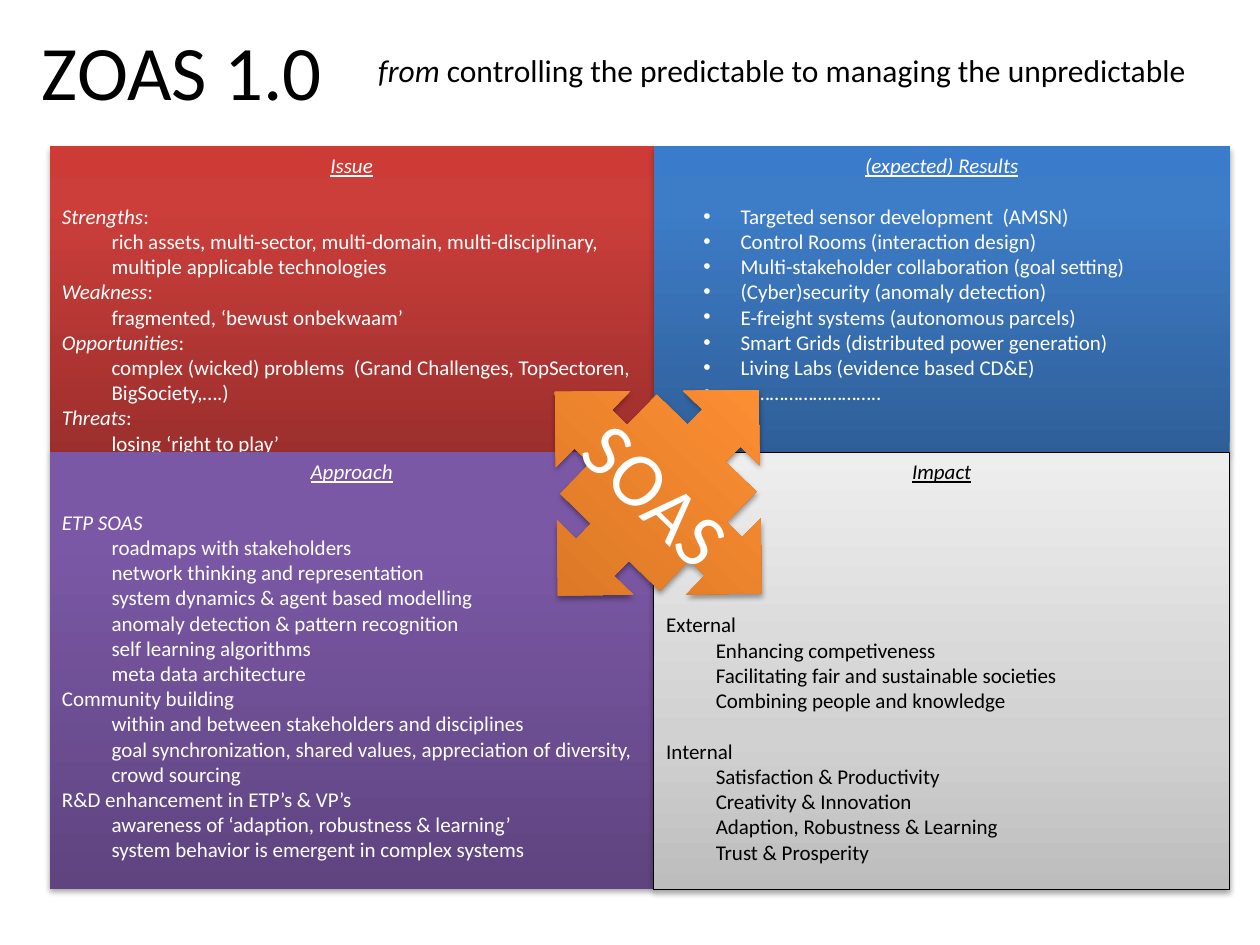
import pptx
import pptx.util
import pptx.oxml
import pptx.oxml.ns
import pptx.dml.color
import pptx.enum.shapes
import pptx.enum.text
import copy

Cm, Pt = pptx.util.Cm, pptx.util.Pt
qn = pptx.oxml.ns.qn
SHAPES = pptx.enum.shapes.MSO_SHAPE
ANCHOR = pptx.enum.text.MSO_ANCHOR
CENTER = pptx.enum.text.PP_ALIGN.CENTER
LEFT = pptx.enum.text.PP_ALIGN.LEFT

COLORS = {"black": "000000", "white": "FFFFFF"}
GRADIENTS = {  # stops from bottom to top: position, colour
    "red": [(0, "9C2F2D"), (0.8, "CB3E3A"), (1, "CE3B37")],
    "blue": [(0, "2F5F99"), (0.8, "3D7CC7"), (1, "3A7CCB")],
    "purple": [(0, "5F4480"), (0.8, "7B58A6"), (1, "7C57A8")],
    "gray": [(0, "BDBDBD"), (0.35, "D1D1D1"), (1, "EEEEEE")],
    "orange": [(0, "CC6E20"), (0.8, "FF9034"), (1, "FF9136")],
}
LINE_HEIGHT = 14.65  # points, one line of 12 pt text

TITLE = "ZOAS 1.0"
SUBTITLE = ("from", " controlling the predictable to managing the unpredictable")
CENTER_LABEL = "SOAS"

# Each paragraph: italic lead, upright rest, empty lines of space above
PANELS = [
    {"heading": "Issue", "column": 0, "row": 0, "gradient": "red", "text": "white",
     "paragraphs": [
         ("Strengths", ": \nrich assets, multi-sector, multi-domain, multi-disciplinary, "
                       "multiple applicable technologies", 1),
         ("Weakness", ": \nfragmented, ‘bewust onbekwaam’", 0),
         ("Opportunities", ": \ncomplex (wicked) problems  (Grand Challenges, "
                           "TopSectoren, BigSociety,….)", 0),
         ("Threats", ":\nlosing ‘right to play’", 0)]},
    {"heading": "(expected) Results", "column": 1, "row": 0, "gradient": "blue",
     "text": "white", "bullets": True,
     "paragraphs": [
         ("", "Targeted sensor development  (AMSN)", 1),
         ("", "Control Rooms (interaction design)", 0),
         ("", "Multi-stakeholder collaboration (goal setting)", 0),
         ("", "(Cyber)security (anomaly detection)", 0),
         ("", "E-freight systems (autonomous parcels)", 0),
         ("", "Smart Grids (distributed power generation)", 0),
         ("", "Living Labs (evidence based CD&E)", 0),
         ("", "………………………..", 0)]},
    {"heading": "Approach", "column": 0, "row": 1, "gradient": "purple", "text": "white",
     "paragraphs": [
         ("ETP SOAS", "\nroadmaps with stakeholders\nnetwork thinking and representation"
                      "\nsystem dynamics & agent based modelling"
                      "\nanomaly detection & pattern recognition"
                      "\nself learning algorithms\nmeta data architecture", 1),
         ("", "Community building\nwithin and between stakeholders and disciplines"
              "\ngoal synchronization, shared values, appreciation of diversity, "
              "crowd sourcing", 0),
         ("", "R&D enhancement in ETP’s & VP’s"
              "\nawareness of ‘adaption, robustness & learning’"
              "\nsystem behavior is emergent in complex systems", 0)]},
    {"heading": "Impact", "column": 1, "row": 1, "gradient": "gray", "text": "black",
     "outline": True,
     "paragraphs": [
         ("", "External\nEnhancing competiveness"
              "\nFacilitating fair and sustainable societies"
              "\nCombining people and knowledge", 5),
         ("", "Internal\nSatisfaction & Productivity\nCreativity & Innovation"
              "\nAdaption, Robustness & Learning\nTrust & Prosperity", 1)]},
]
COLUMN_EDGES = [1.0, 13.18, 24.79]
ROW_EDGES = [2.95, 9.12, 17.93]


def rgb(name):
    return pptx.dml.color.RGBColor.from_string(COLORS[name])


def set_font(paragraph, size, color, alignment=CENTER):
    paragraph.alignment = alignment
    paragraph.font.name = "Calibri"
    paragraph.font.size = Pt(size)
    paragraph.font.color.rgb = rgb(color)


def add_text(paragraph, text, italic=False):
    for number, line in enumerate(text.split("\n")):
        if number:
            paragraph.add_line_break()
        if line:
            run = paragraph.add_run()
            run.text = line
            if italic:
                run.font.italic = True


def set_indent(paragraph, margin, first_line, bullet=False):
    properties = paragraph._p.get_or_add_pPr()
    properties.set("marL", str(Cm(margin)))
    properties.set("indent", str(Cm(first_line)))
    if bullet:
        pptx.oxml.ns  # bullet markup is not covered by the public methods
        for tag, key, value in (("a:buFont", "typeface", "Arial"),
                                ("a:buChar", "char", "•")):
            properties.append(pptx.oxml.parse_xml(
                f'<{tag} {pptx.oxml.ns.nsdecls("a")} {key}="{value}"/>'))


def add_gradient_shape(slide, kind, box, gradient, outline=False):
    shape = slide.shapes.add_shape(kind, *(Cm(length) for length in box))
    shape.fill.gradient()
    shape.fill.gradient_angle = 90
    stop_list = shape._element.spPr.find(".//" + qn("a:gsLst"))
    stop_list.append(copy.deepcopy(stop_list[0]))
    for stop, (position, color) in zip(shape.fill.gradient_stops, GRADIENTS[gradient]):
        stop.position = position
        stop.color.rgb = pptx.dml.color.RGBColor.from_string(color)
    if outline:
        shape.line.color.rgb = rgb("black")
        shape.line.width = Pt(0.75)
    else:
        shape.line.fill.background()
    # Soft shadow straight below
    shape.shadow.inherit = False
    shape._element.spPr.find(qn("a:effectLst")).append(pptx.oxml.parse_xml(
        f'<a:outerShdw {pptx.oxml.ns.nsdecls("a")} blurRad="{Pt(3.1)}" dist="{Pt(1.8)}" '
        f'dir="5400000" rotWithShape="0"><a:srgbClr val="{COLORS["black"]}">'
        '<a:alpha val="35000"/></a:srgbClr></a:outerShdw>'))
    return shape


def add_panel(slide, panel):
    column, row = panel["column"], panel["row"]
    left, right = COLUMN_EDGES[column:column + 2]
    top, bottom = ROW_EDGES[row:row + 2]
    shape = add_gradient_shape(slide, SHAPES.RECTANGLE,
                               (left, top, right - left, bottom - top),
                               panel["gradient"], panel.get("outline", False))
    frame = shape.text_frame
    frame.word_wrap = True
    frame.vertical_anchor = ANCHOR.TOP
    heading = frame.paragraphs[0]
    heading.text = panel["heading"]
    set_font(heading, 12, panel["text"])
    heading.font.italic = heading.font.underline = True
    bullets = panel.get("bullets", False)
    for lead, rest, empty_lines in panel["paragraphs"]:
        paragraph = frame.add_paragraph()
        if bullets:
            set_indent(paragraph, 1.5, -0.75, bullet=True)
        else:
            set_indent(paragraph, 1, -1)
        set_font(paragraph, 12, panel["text"], LEFT)
        if empty_lines:
            paragraph.space_before = Pt(empty_lines * LINE_HEIGHT)
        add_text(paragraph, lead, italic=True)
        add_text(paragraph, rest)


presentation = pptx.Presentation()
presentation.slide_width, presentation.slide_height = Cm(25.4), Cm(19.05)
slide = presentation.slides.add_slide(presentation.slide_layouts[5])

# Title
title = slide.shapes.title
title.left, title.top, title.width, title.height = Cm(0.56), Cm(0.33), Cm(6.22), Cm(2.13)
title.text_frame.text = TITLE
title.text_frame.word_wrap = False
title.text_frame.vertical_anchor = ANCHOR.MIDDLE
set_font(title.text_frame.paragraphs[0], 44, "black")

# Four quadrants
for panel in PANELS:
    add_panel(slide, panel)

# Rotated arrows in the middle
arrows = add_gradient_shape(slide, SHAPES.QUAD_ARROW_CALLOUT,
                            (10.36, 7.04, 5.82, 5.79), "orange")
arrows.rotation = 44.3
arrows.text_frame.word_wrap = False
arrows.text_frame.vertical_anchor = ANCHOR.MIDDLE
arrows.text_frame.text = CENTER_LABEL
set_font(arrows.text_frame.paragraphs[0], 44, "white")

# Subtitle
subtitle = slide.shapes.add_textbox(Cm(6.73), Cm(0.91), Cm(18.08), Cm(1.02))
subtitle.text_frame.word_wrap = False
paragraph = subtitle.text_frame.paragraphs[0]
set_font(paragraph, 18, "black")
add_text(paragraph, SUBTITLE[0], italic=True)
add_text(paragraph, SUBTITLE[1])

presentation.save("out.pptx")
